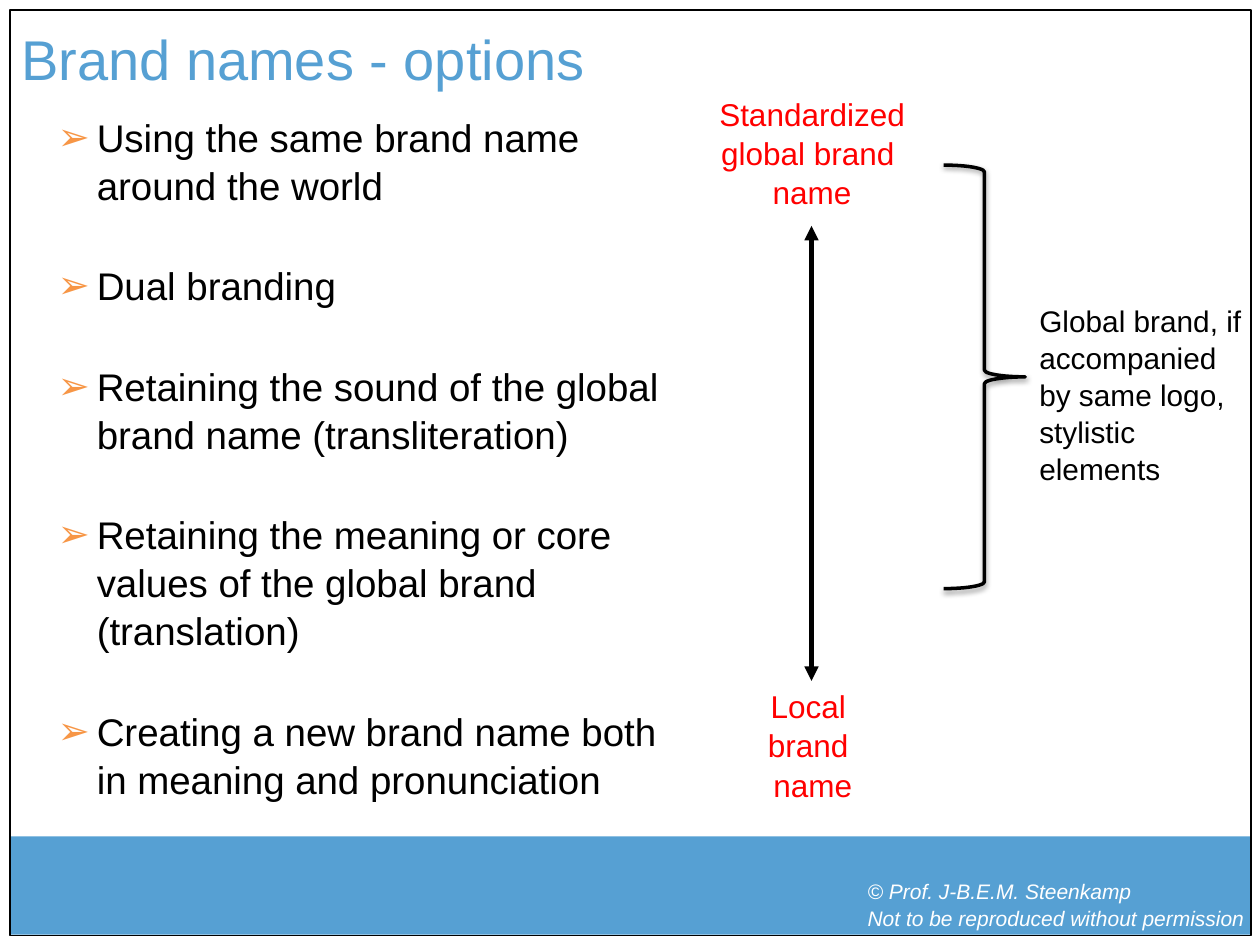
from dataclasses import dataclass

from lxml.etree import SubElement
from pptx import Presentation
from pptx.dml.color import RGBColor
from pptx.enum.shapes import MSO_CONNECTOR, MSO_SHAPE
from pptx.enum.text import PP_ALIGN
from pptx.oxml.ns import qn
from pptx.util import Emu, Inches, Pt

BLUE = RGBColor(0x56, 0xA0, 0xD3)
ORANGE = RGBColor(0xF7, 0x96, 0x46)
RED = RGBColor(0xFF, 0x00, 0x00)
BLACK = RGBColor(0x00, 0x00, 0x00)
WHITE = RGBColor(0xFF, 0xFF, 0xFF)

FONT = "Arial"
LINE_SPACING = 1.04

OPTIONS = [
    "Using the same brand name around the world",
    "Dual branding",
    "Retaining the sound of the global brand name (transliteration)",
    "Retaining the meaning or core values of the global brand (translation)",
    "Creating a new brand name both in meaning and pronunciation",
]


@dataclass
class Box:
    left: int
    top: int
    width: int
    height: int

    def inner(self, left, top, width, height):
        """Inner box, given in percent of this one."""
        return Box(
            Emu(int(self.left + self.width * left / 100)),
            Emu(int(self.top + self.height * top / 100)),
            Emu(int(self.width * width / 100)),
            Emu(int(self.height * height / 100)),
        )

    def place(self):
        return self.left, self.top, self.width, self.height


def add_text(page, box, lines, size, color, align=PP_ALIGN.LEFT, italic=False):
    frame = page.shapes.add_textbox(*box.place()).text_frame
    frame.word_wrap = True
    frame.text = "\n".join(lines)
    for para in frame.paragraphs:
        para.alignment = align
        para.line_spacing = LINE_SPACING
        for span in para.runs:
            span.font.name = FONT
            span.font.size = Pt(size)
            span.font.italic = italic
            span.font.color.rgb = color
    return frame


def add_outline(page, kind, box, weight):
    shape = page.shapes.add_shape(kind, *box.place())
    shape.shadow.inherit = False
    shape.fill.background()
    shape.line.color.rgb = BLACK
    shape.line.width = Pt(weight)
    return shape


def add_bullet(para):
    """Orange arrow bullet on a hanging indent."""
    props = para._p.get_or_add_pPr()
    props.set("marL", str(Inches(0.81)))
    props.set("indent", str(Inches(-0.31)))
    color = SubElement(props, qn("a:buClr"))
    SubElement(color, qn("a:srgbClr"), val=str(ORANGE))
    SubElement(props, qn("a:buFont"), typeface=FONT)
    SubElement(props, qn("a:buChar"), char="➢")


def add_soft_shadow(shape):
    effects = shape._element.spPr.find(qn("a:effectLst"))
    shadow = SubElement(effects, qn("a:outerShdw"), blurRad=str(Pt(3.1)),
                        dist=str(Pt(1.6)), dir="5400000", rotWithShape="0")
    color = SubElement(shadow, qn("a:srgbClr"), val=str(BLACK))
    SubElement(color, qn("a:alpha"), val="38000")


def add_double_arrow(page, box):
    """Vertical arrow with two heads down the left side of the box."""
    arrow = page.shapes.add_connector(
        MSO_CONNECTOR.STRAIGHT, box.left, box.top, box.left, box.top + box.height)
    arrow.line.color.rgb = BLACK
    arrow.line.width = Pt(2.75)
    line = arrow._element.spPr.find(qn("a:ln"))
    for end in ("a:headEnd", "a:tailEnd"):
        SubElement(line, qn(end), type="triangle")
    SubElement(arrow._element.spPr, qn("a:effectLst"))


def draw_footer(page, box):
    band = page.shapes.add_shape(MSO_SHAPE.RECTANGLE, *box.place())
    band.shadow.inherit = False
    band.fill.solid()
    band.fill.fore_color.rgb = BLUE
    band.line.fill.background()
    credit = ["© Prof. J-B.E.M. Steenkamp", "Not to be reproduced without permission"]
    frame = add_text(page, box.inner(68.1, 36, 32.4, 64), credit, 12, WHITE, italic=True)
    frame.word_wrap = False


def draw_title(page, box):
    frame = add_text(page, box, ["Brand names - options"], 32, BLUE)
    frame.margin_top = Inches(0.09)


def draw_options(page, box):
    frame = add_text(page, box, OPTIONS, 22, BLACK)
    for para in frame.paragraphs:
        para.space_after = Pt(30)
        add_bullet(para)


def draw_spectrum(page, box):
    # Brace over the range that counts as a global brand
    brace = add_outline(page, MSO_SHAPE.RIGHT_BRACE, box.inner(44.2, 11.7, 14.4, 63.4), 2)
    add_soft_shadow(brace)

    # Two ends of the scale and the arrow between them
    add_text(page, box.inner(1.1, 0, 39.8, 11), ["Standardized global brand ", "name"],
             18, RED, PP_ALIGN.CENTER)
    add_text(page, box.inner(0, 88.7, 42.2, 11), ["Local ", "brand ", "name"],
             18, RED, PP_ALIGN.CENTER)
    add_double_arrow(page, box.inner(20.9, 20.8, 0, 68.1))

    # Note beside the brace
    add_text(page, box.inner(58.9, 31.1, 40.7, 11),
             ["Global brand, if accompanied by same logo, stylistic elements"], 17, BLACK)


def main():
    deck = Presentation()
    deck.slide_width, deck.slide_height = Inches(10), Inches(7.5)
    page = deck.slides.add_slide(deck.slide_layouts[6])
    whole = Box(0, 0, deck.slide_width, deck.slide_height)

    draw_footer(page, whole.inner(0.8, 88.5, 98.5, 10.4))
    add_outline(page, MSO_SHAPE.RECTANGLE, whole.inner(0.8, 1.1, 98.5, 97.9), 1)
    draw_title(page, whole.inner(0.7, 1.1, 97, 7.7))
    draw_options(page, whole.inner(-1.4, 11.2, 56.9, 63.9))
    draw_spectrum(page, whole.inner(55, 9.2, 45, 70.7))

    deck.save("out.pptx")


if __name__ == "__main__":
    main()
